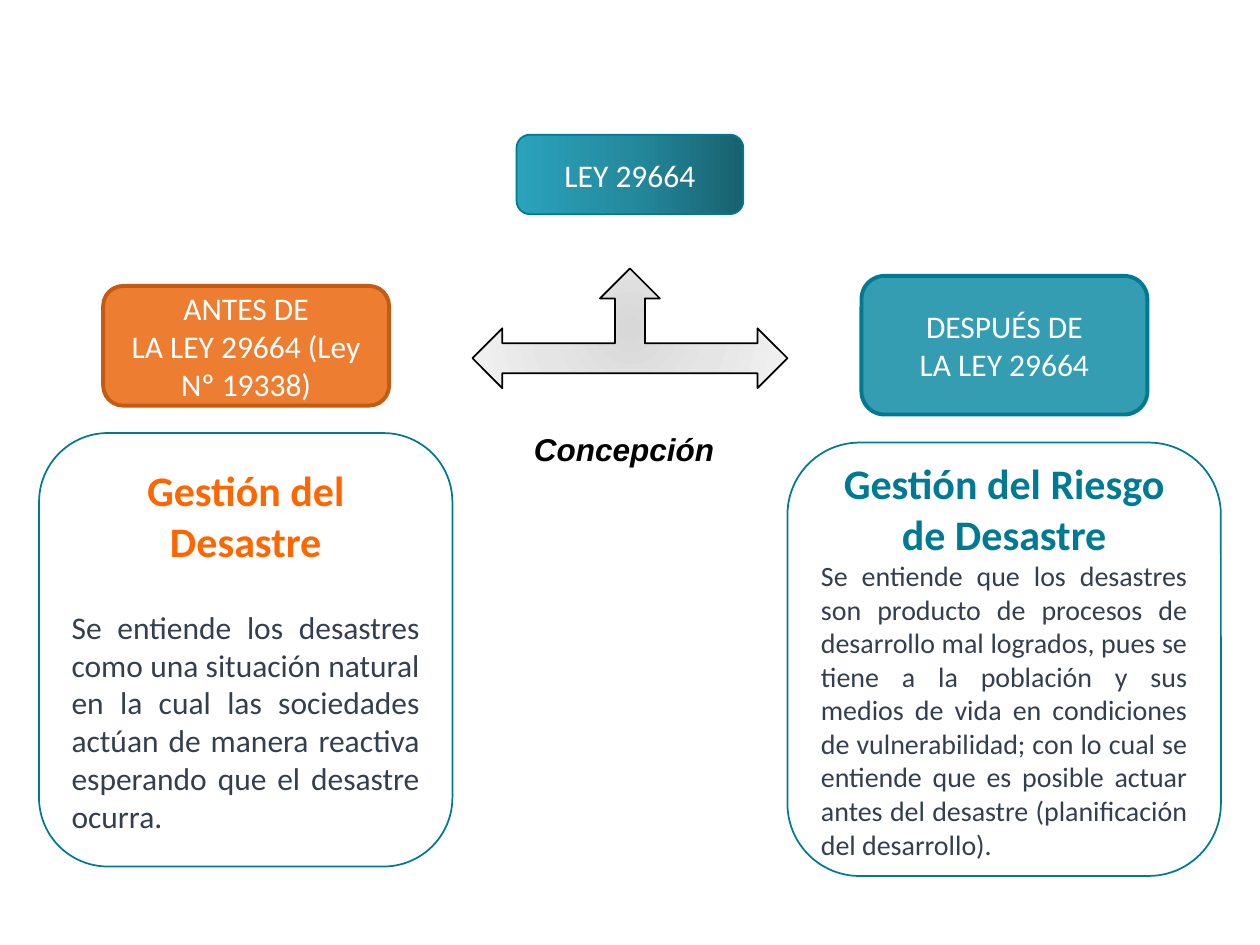
from lxml import etree
from pptx import Presentation
from pptx.dml.color import RGBColor
from pptx.enum import shapes, text
from pptx.oxml import ns
from pptx.util import Pt

WHITE, BLACK, TEAL, ORANGE, SLATE = "FFFFFF", "000000", "007A92", "FF6600", "333F50"
CENTER, JUSTIFY = text.PP_ALIGN.CENTER, text.PP_ALIGN.JUSTIFY
ROUNDED = shapes.MSO_SHAPE.ROUNDED_RECTANGLE


def color(hex_string):
    return RGBColor.from_string(hex_string)


def set_gradient(shape, stops, angle=None):
    """Fill with (percent, hex) stops: linear at an angle, else from the centre."""
    shape.fill.gradient()
    gradient = shape.fill._fill._gradFill
    for child in list(gradient):
        gradient.remove(child)

    def add(parent, tag, **attributes):
        return etree.SubElement(parent, ns.qn(tag), **attributes)

    stop_list = add(gradient, "a:gsLst")
    for percent, hex_string in stops:
        stop = add(stop_list, "a:gs", pos=str(percent * 1000))
        add(stop, "a:srgbClr", val=hex_string)
    if angle is None:
        circle = add(gradient, "a:path", path="circle")
        add(circle, "a:fillToRect", l="50000", t="50000", r="50000", b="50000")
    else:
        add(gradient, "a:lin", ang=str(angle * 60000), scaled="0")


def add_outlined(slide, kind, box, line, width=1, fill=None):
    shape = slide.shapes.add_shape(kind, *map(Pt, box))
    shape.shadow.inherit = False
    shape.line.color.rgb = color(line)
    shape.line.width = Pt(width)
    if fill:
        shape.fill.solid()
        shape.fill.fore_color.rgb = color(fill)
    else:
        shape.fill.background()
    return shape


def write(shape, lines, wrap=True):
    """Write (words, paragraph format, font format, hex colour) lines."""
    frame = shape.text_frame
    frame.word_wrap = wrap
    for index, (words, layout, font, hex_string) in enumerate(lines):
        paragraph = frame.add_paragraph() if index else frame.paragraphs[0]
        run = paragraph.add_run()
        run.text = words
        for target, values in ((paragraph, layout), (run.font, font)):
            for name, value in values.items():
                setattr(target, name, value)
        run.font.color.rgb = color(hex_string)


def add_heading(slide, box, lines, line, width=2.25, fill=None):
    shape = add_outlined(slide, ROUNDED, box, line, width, fill)
    shape.text_frame.vertical_anchor = text.MSO_ANCHOR.MIDDLE
    font = {"name": "Calibri", "size": Pt(18)}
    write(shape, [(words, {"alignment": CENTER}, font, WHITE) for words in lines])
    return shape


def add_panel(slide, box, title, title_color, body, body_size, gap=0):
    shape = add_outlined(slide, ROUNDED, box, TEAL)
    shape.text_frame.vertical_anchor = text.MSO_ANCHOR.MIDDLE
    title_font = {"name": "Calibri", "size": Pt(24), "bold": True}
    body_font = {"name": "Calibri", "size": Pt(body_size), "bold": False}
    write(shape, [
        (title, {"alignment": CENTER, "space_after": Pt(gap)}, title_font, title_color),
        (body, {"alignment": JUSTIFY}, body_font, SLATE),
    ])


def add_center(slide, arrow_box, law_box, label_box):
    # Three-way arrow
    arrow = add_outlined(slide, shapes.MSO_SHAPE.LEFT_RIGHT_UP_ARROW, arrow_box, BLACK)
    set_gradient(arrow, [(0, "D8D8D8"), (50, "E5E5E5"), (100, "F2F2F2")])
    # Law
    law = add_heading(slide, law_box, ["LEY 29664"], TEAL, width=1)
    set_gradient(law, [(0, "19616F"), (50, "248A9E"), (100, "2BA3BB")], angle=180)
    # Label under the arrow
    label = slide.shapes.add_textbox(*map(Pt, label_box))
    font = {"name": "Arial", "size": Pt(18), "bold": True, "italic": True}
    write(label, [("Concepción", {}, font, BLACK)], wrap=False)


def main():
    presentation = Presentation()
    presentation.slide_width, presentation.slide_height = Pt(720), Pt(540)
    slide = presentation.slides.add_slide(presentation.slide_layouts[6])

    add_center(slide, (270, 153.4, 180, 68.4), (295.2, 77, 129.6, 45.4),
               (298, 242, 118, 29.5))

    # Before the law
    add_heading(slide, (59, 163.4, 163.4, 68.4),
                ["ANTES DE", "LA LEY 29664 (Ley Nº 19338)"], "C55A11", fill="ED7D31")
    add_panel(slide, (22.3, 247.5, 236.2, 247.7), "Gestión del Desastre", ORANGE,
              "Se entiende los desastres como una situación natural en la cual las "
              "sociedades actúan de manera reactiva esperando que el desastre ocurra.",
              18, gap=24)

    # After the law
    add_heading(slide, (492.3, 157.7, 163.4, 79.2),
                ["DESPUÉS DE", "LA LEY 29664"], TEAL, fill="349DB2")
    add_panel(slide, (450, 252.9, 247.7, 247.7), "Gestión del Riesgo de Desastre", TEAL,
              "Se entiende que los desastres son producto de procesos de desarrollo "
              "mal logrados, pues se tiene a la población y sus medios de vida en "
              "condiciones de vulnerabilidad; con lo cual se entiende que es posible "
              "actuar antes del desastre (planificación del desarrollo).", 16)

    presentation.save("out.pptx")


if __name__ == "__main__":
    main()
